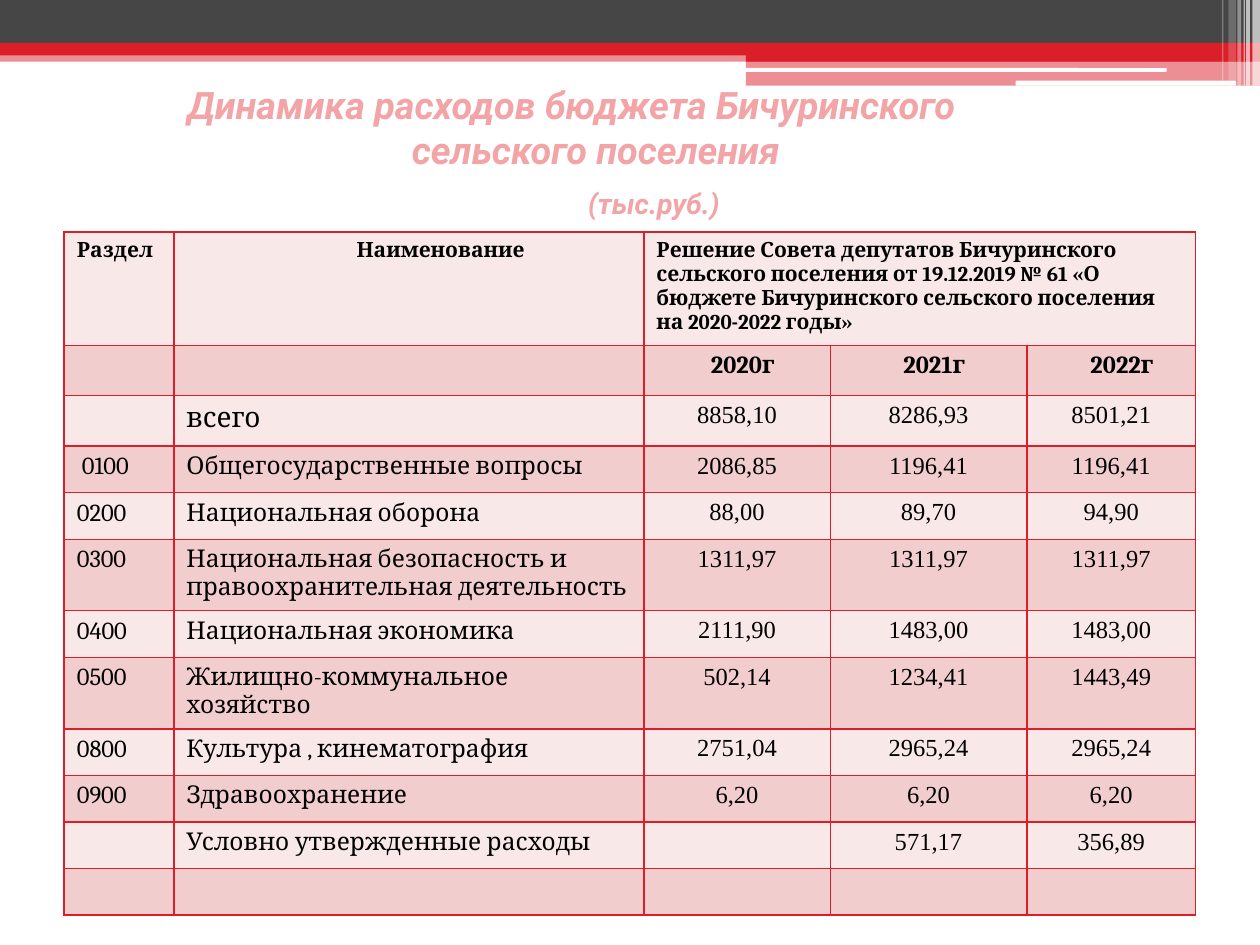
"""Build the slide with the village budget spending table."""
from lxml import etree
from pptx import Presentation
from pptx.dml.color import RGBColor
from pptx.enum import shapes, text
from pptx.oxml.ns import qn
from pptx.util import Inches, Pt

RED, GREY, WHITE = "DA1F28", "464646", "FFFFFF"


def paint(fill, tint, alpha=100):
    """Fill with a hex colour at a given opacity."""
    fill.solid()
    fill.fore_color.rgb = RGBColor.from_string(tint)
    if alpha < 100:
        node = fill._xPr.find(qn("a:solidFill"))[0]
        etree.SubElement(node, qn("a:alpha"), val=str(alpha * 1000))


def write(para, words, size, face, tint="000000", bold=False, slant=False, indent=0):
    """Add one run to a paragraph."""
    run = para.add_run()
    run.text = words
    font = run.font
    font.size, font.name, font.bold, font.italic = Pt(size), face, bold, slant
    font.color.rgb = RGBColor.from_string(tint)
    if indent:
        para._p.get_or_add_pPr().set("marL", str(Inches(indent)))


prs = Presentation()
prs.slide_width, prs.slide_height = Inches(10), Inches(7.5)
slide = prs.slides.add_slide(prs.slide_layouts[6])

RECT = shapes.MSO_SHAPE.RECTANGLE
ROUND = shapes.MSO_SHAPE.ROUNDED_RECTANGLE
bars = [
    (RECT, 0, 0.4, 10, 0.09, RED, 50),
    (RECT, 0, 0, 10, 0.34, GREY, 100),
    (RECT, 0, 0.34, 10, 0.1, RED, 100),
    (RECT, 5.92, 0.39, 4.08, 0.1, RED, 100),
    (RECT, 5.92, 0.48, 4.08, 0.2, RED, 50),
    (ROUND, 5.91, 0.54, 3.35, 0.03, WHITE, 100),
    (ROUND, 8.06, 0.64, 1.75, 0.04, WHITE, 100),
    (RECT, 9.94, 0, 0.06, 0.68, WHITE, 65),
    (RECT, 9.89, 0, 0.03, 0.68, WHITE, 65),
    (RECT, 9.87, 0, 0.01, 0.68, WHITE, 60),
    (RECT, 9.82, 0, 0.03, 0.68, WHITE, 40),
    (RECT, 9.75, 0, 0.06, 0.64, WHITE, 20),
    (RECT, 9.7, 0, 0.01, 0.64, WHITE, 30),
]
for kind, *box, tint, alpha in bars:
    bar = slide.shapes.add_shape(kind, *map(Inches, box))
    bar.shadow.inherit = False
    bar.line.fill.background()
    paint(bar.fill, tint, alpha)

title = slide.shapes.add_textbox(Inches(0), Inches(0.84), Inches(9.37), Inches(0.71))
frame = title.text_frame
frame.word_wrap = True
frame.vertical_anchor = text.MSO_ANCHOR.MIDDLE
lines = [
    ("Динамика расходов бюджета Бичуринского", 21.6, 1.39, 0),
    ("сельского поселения", 21.6, 3.17, 0),
    ("(тыс.руб.)", 16.2, 4.57, 8),
]
for spot, (words, size, indent, gap) in enumerate(lines):
    para = frame.add_paragraph() if spot else frame.paragraphs[0]
    para.space_before = Pt(gap)
    write(para, words, size, "Roboto", "F2A4A7", True, True, indent)

rows = [
    ("Раздел", "Наименование",
     "Решение Совета депутатов Бичуринского сельского поселения от 19.12.2019 № 61 "
     "«О бюджете Бичуринского сельского поселения на 2020-2022 годы»", "", ""),
    ("", "", "2020г", "2021г", "2022г"),
    ("", "всего", "8858,10", "8286,93", "8501,21"),
    ("0100", "Общегосударственные вопросы", "2086,85", "1196,41", "1196,41"),
    ("0200", "Национальная оборона", "88,00", "89,70", "94,90"),
    ("0300", "Национальная безопасность и правоохранительная деятельность",
     "1311,97", "1311,97", "1311,97"),
    ("0400", "Национальная экономика", "2111,90", "1483,00", "1483,00"),
    ("0500", "Жилищно-коммунальное хозяйство", "502,14", "1234,41", "1443,49"),
    ("0800", "Культура , кинематография", "2751,04", "2965,24", "2965,24"),
    ("0900", "Здравоохранение", "6,20", "6,20", "6,20"),
    ("", "Условно утвержденные расходы", "", "571,17", "356,89"),
    ("", "", "", "", ""),
]
wide = [0.87, 3.73, 1.48, 1.56, 1.34]
high = [0.89, 0.4, 0.4, 0.37, 0.37, 0.56, 0.37, 0.55] + [0.37] * 4
shift = {(0, 1): 1.35, (1, 2): 0.09, (1, 3): 0.09, (1, 4): 0.17, (3, 0): 0.04}

table = slide.shapes.add_table(
    len(rows), len(wide), Inches(0.51), Inches(1.84), Inches(sum(wide)), Inches(sum(high))
).table
table.first_row = table.horz_banding = False
for col, size in zip(table.columns, wide):
    col.width = Inches(size)
for row, size in zip(table.rows, high):
    row.height = Inches(size)
table.cell(0, 2).merge(table.cell(0, 4))

for r, row in enumerate(rows):
    for c, words in enumerate(row):
        cell = table.cell(r, c)
        props = cell._tc.get_or_add_tcPr()
        for side in ("lnL", "lnR", "lnT", "lnB"):
            edge = etree.SubElement(props, qn(f"a:{side}"), w=str(Pt(1)))
            ink = etree.SubElement(edge, qn("a:solidFill"))
            etree.SubElement(ink, qn("a:srgbClr"), val=RED)
        paint(cell.fill, "F1CDCD" if r % 2 else "F8E8E8")
        para = cell.text_frame.paragraphs[0]
        if not words:
            etree.SubElement(para._p, qn("a:endParaRPr"), sz="1200")
            continue
        if r and c > 1:
            para.alignment = text.PP_ALIGN.CENTER
        size = 12 if r == 0 else 16 if words == "всего" else 14
        face = "Times New Roman" if r > 1 and c > 1 else "Cambria"
        write(para, words, size, face, bold=r < 2, indent=shift.get((r, c), 0))

prs.save("out.pptx")
